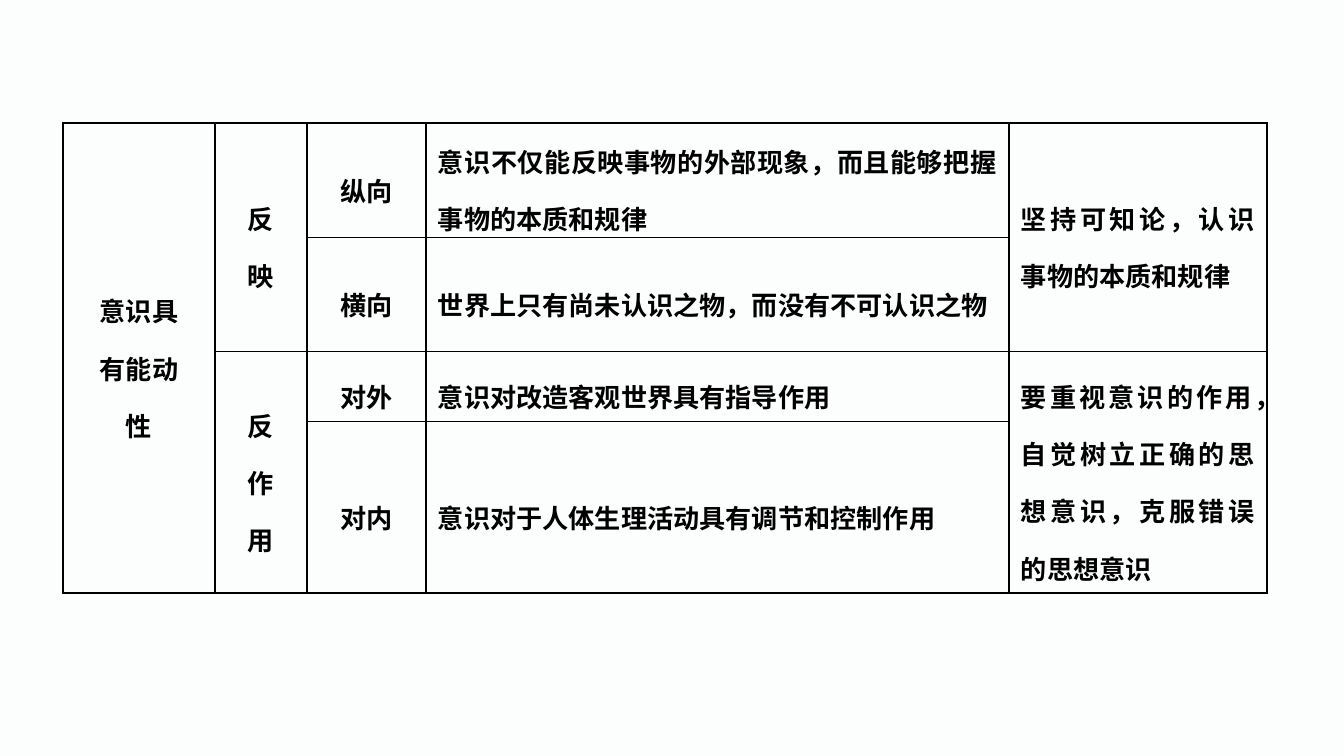
import dataclasses

import lxml.etree
import pptx
import pptx.dml.color
import pptx.enum.text
import pptx.oxml.ns
import pptx.slide
import pptx.table
import pptx.util

EMU_PER_PX = 914400 / 134.4
BACKGROUND = pptx.dml.color.RGBColor(0xFC, 0xFD, 0xFD)
BLACK = pptx.dml.color.RGBColor(0x00, 0x00, 0x00)
CENTER = pptx.enum.text.PP_ALIGN.CENTER
JUSTIFY = pptx.enum.text.PP_ALIGN.JUSTIFY

SLIDE_SIZE = (1344, 756)
TABLE_LEFT, TABLE_TOP = 63, 123
COLUMN_WIDTHS = (152, 92, 119, 583, 258)
ROW_HEIGHTS = (105, 70, 70, 70)
SIDE_MARGIN = 12
TAB_POSITION = 402

FONT_FORMAT = {"name": "Times New Roman", "size": pptx.util.Pt(14), "bold": True}


@dataclasses.dataclass(frozen=True)
class Entry:
    row: int
    column: int
    lines: tuple[str, ...]
    row_span: int = 1
    alignment: pptx.enum.text.PP_ALIGN = CENTER


ENTRIES = (
    # Topic and its two sides
    Entry(0, 0, ("意识具", "有能动", "性"), row_span=4),
    Entry(0, 1, ("反", "映"), row_span=2),
    Entry(2, 1, ("反", "作", "用"), row_span=2),
    # Directions
    Entry(0, 2, ("纵向",)),
    Entry(1, 2, ("横向",)),
    Entry(2, 2, ("对外",)),
    Entry(3, 2, ("对内",)),
    # Explanations
    Entry(0, 3, ("意识不仅能反映事物的外部现象，而且能够把握事物的本质和规律",), alignment=JUSTIFY),
    Entry(1, 3, ("世界上只有尚未认识之物，而没有不可认识之物",), alignment=JUSTIFY),
    Entry(2, 3, ("意识对改造客观世界具有指导作用",), alignment=JUSTIFY),
    Entry(3, 3, ("意识对于人体生理活动具有调节和控制作用",), alignment=JUSTIFY),
    # Conclusions
    Entry(0, 4, ("坚持可知论，认识事物的本质和规律",), row_span=2, alignment=JUSTIFY),
    Entry(2, 4, ("要重视意识的作用，自觉树立正确的思想意识，克服错误的思想意识",),
          row_span=2, alignment=JUSTIFY),
)


def px(length: int) -> pptx.util.Emu:
    return pptx.util.Emu(round(length * EMU_PER_PX))


def add_element(parent: lxml.etree._Element, tag: str, **attributes: str) -> lxml.etree._Element:
    return lxml.etree.SubElement(parent, pptx.oxml.ns.qn(tag), attributes)


def format_cell(cell: pptx.table._Cell) -> None:
    cell_format = {
        "margin_left": px(SIDE_MARGIN), "margin_right": px(SIDE_MARGIN),
        "margin_top": 0, "margin_bottom": 0,
        "vertical_anchor": pptx.enum.text.MSO_ANCHOR.MIDDLE,
    }
    for name, value in cell_format.items():
        setattr(cell, name, value)
    properties = cell._tc.get_or_add_tcPr()
    for side in ("a:lnL", "a:lnR", "a:lnT", "a:lnB"):
        border = add_element(properties, side, w=str(pptx.util.Pt(1)))
        fill = add_element(border, "a:solidFill")
        add_element(fill, "a:srgbClr", val=str(BLACK))
    cell.fill.background()


def write_entry(table: pptx.table.Table, entry: Entry) -> None:
    cell = table.cell(entry.row, entry.column)
    if entry.row_span > 1:
        cell.merge(table.cell(entry.row + entry.row_span - 1, entry.column))
    frame = cell.text_frame
    for index, line in enumerate(entry.lines):
        para = frame.add_paragraph() if index else frame.paragraphs[0]
        tabs = add_element(para._p.get_or_add_pPr(), "a:tabLst")
        add_element(tabs, "a:tab", pos=str(px(TAB_POSITION)), algn="l")
        para.alignment = entry.alignment
        para.line_spacing = 1.5
        span = para.add_run()
        span.text = line
        for name, value in FONT_FORMAT.items():
            setattr(span.font, name, value)
        span.font.color.rgb = BLACK


def add_summary_table(page: pptx.slide.Slide) -> None:
    table = page.shapes.add_table(
        len(ROW_HEIGHTS), len(COLUMN_WIDTHS), px(TABLE_LEFT), px(TABLE_TOP),
        px(sum(COLUMN_WIDTHS)), px(sum(ROW_HEIGHTS))).table
    table.first_row = table.horz_banding = False
    for column, width in zip(table.columns, COLUMN_WIDTHS):
        column.width = px(width)
    for row, height in zip(table.rows, ROW_HEIGHTS):
        row.height = px(height)
    for cell in table.iter_cells():
        format_cell(cell)
    for entry in ENTRIES:
        write_entry(table, entry)


def main() -> None:
    deck = pptx.Presentation()
    deck.slide_width, deck.slide_height = map(px, SLIDE_SIZE)
    page = deck.slides.add_slide(deck.slide_layouts[6])
    page.background.fill.solid()
    page.background.fill.fore_color.rgb = BACKGROUND
    add_summary_table(page)
    deck.save("out.pptx")


if __name__ == "__main__":
    main()
